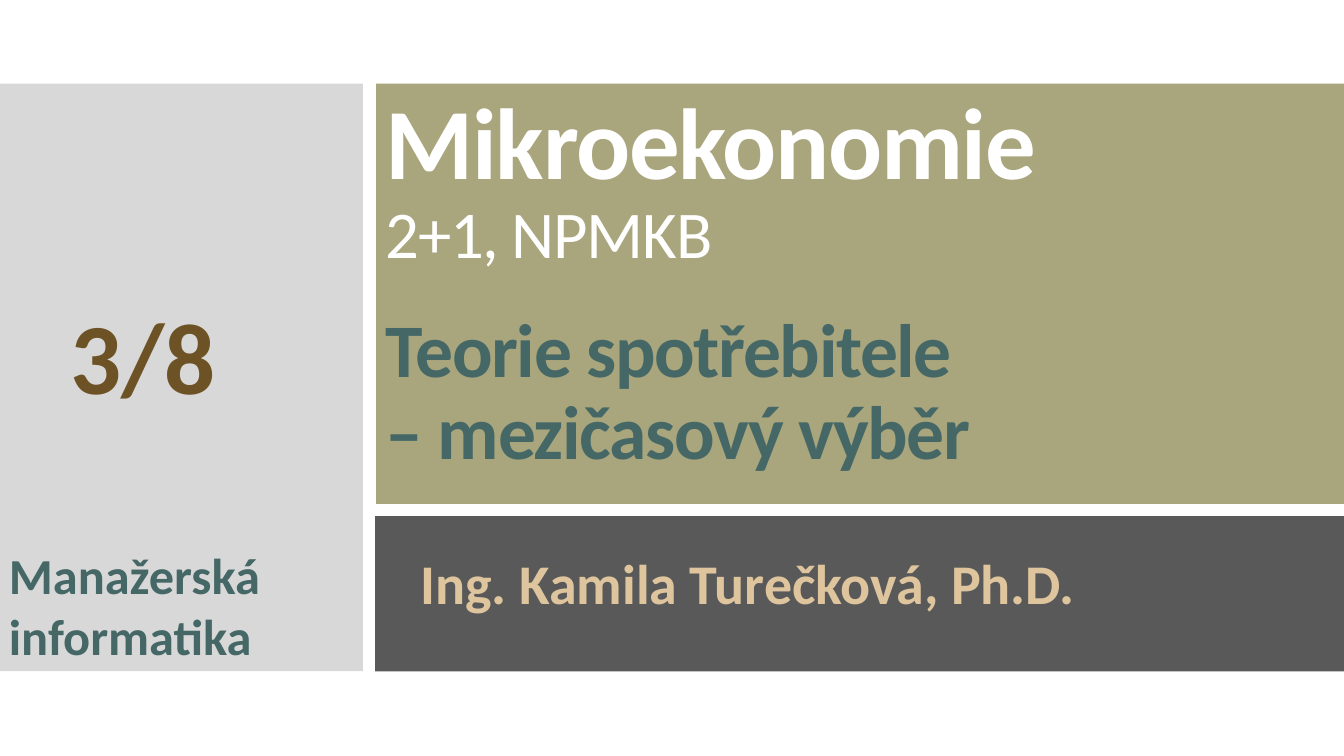
from dataclasses import dataclass

from pptx import Presentation
from pptx.dml.color import RGBColor
from pptx.enum.shapes import MSO_SHAPE
from pptx.enum.text import MSO_ANCHOR
from pptx.util import Inches, Pt

RECTANGLE = MSO_SHAPE.RECTANGLE
TOP, BOTTOM = MSO_ANCHOR.TOP, MSO_ANCHOR.BOTTOM


@dataclass(frozen=True)
class Theme:
    font: str = "Calibri"
    white: str = "FFFFFF"
    light_grey: str = "D8D8D8"
    dark_grey: str = "595959"
    olive: str = "A9A57C"
    teal: str = "456867"
    sand: str = "DEC59E"
    brown: str = "6D5225"
    course_size: float = 72
    code_size: float = 47.7
    topic_size: float = 54
    author_size: float = 40
    programme_size: float = 36


theme = Theme()


def write(frame, text, size, color, bold=True, line_spacing=0.9, before=0, tracking=0):
    """Append a paragraph; a vertical tab in the text breaks the line."""
    paragraph = frame.paragraphs[0]
    if paragraph.runs:
        paragraph = frame.add_paragraph()
    paragraph.text = text
    paragraph.line_spacing = line_spacing
    paragraph.space_before = Pt(before)
    for run in paragraph.runs:
        run.font.name = theme.font
        run.font.size = Pt(size)
        run.font.bold = bold
        run.font.color.rgb = RGBColor.from_string(color)
        if tracking:
            run.font._element.set("spc", str(tracking * 100))


def add_text_area(left, top, width, height, anchor=TOP):
    box = slide.shapes.add_textbox(Inches(left), Inches(top), Inches(width), Inches(height))
    box.text_frame.word_wrap = True
    box.text_frame.vertical_anchor = anchor
    return box.text_frame


prs = Presentation()
prs.slide_width, prs.slide_height = Inches(13.33), Inches(7.5)
slide = prs.slides.add_slide(prs.slide_layouts[6])

# Background panels
panels = [
    (0, 0.83, 3.6, 5.83, theme.light_grey),
    (3.73, 0.83, 9.6, 4.17, theme.olive),
    (3.72, 5.12, 9.61, 1.54, theme.dark_grey),
]
for left, top, width, height, color in panels:
    panel = slide.shapes.add_shape(
        RECTANGLE, Inches(left), Inches(top), Inches(width), Inches(height))
    panel.shadow.inherit = False
    panel.fill.solid()
    panel.fill.fore_color.rgb = RGBColor.from_string(color)
    panel.line.fill.background()

# Course title and lecture topic
title = add_text_area(3.73, 1.42, 9.6, 3.35, anchor=BOTTOM)
write(title, "Mikroekonomie", theme.course_size, theme.white, tracking=-1)
write(title, "2+1, NPMKB", theme.code_size, theme.white, bold=False, tracking=-1)
write(title, "Teorie spotřebitele\v– mezičasový výběr", theme.topic_size, theme.teal,
      before=28, tracking=-1)

# Author
author = add_text_area(4.07, 5.47, 7.86, 0.84)
write(author, "Ing. Kamila Turečková, Ph.D.", theme.author_size, theme.sand)

# Lecture number and study programme
lecture_number = add_text_area(0.6, 3.1, 2.63, 1.09)
write(lecture_number, "3/8", theme.course_size, theme.brown, line_spacing=0.8)
programme = add_text_area(-0.01, 5.35, 3.24, 1.31)
write(programme, "Manažerská informatika", theme.programme_size, theme.teal, line_spacing=1.0)

prs.save("out.pptx")
